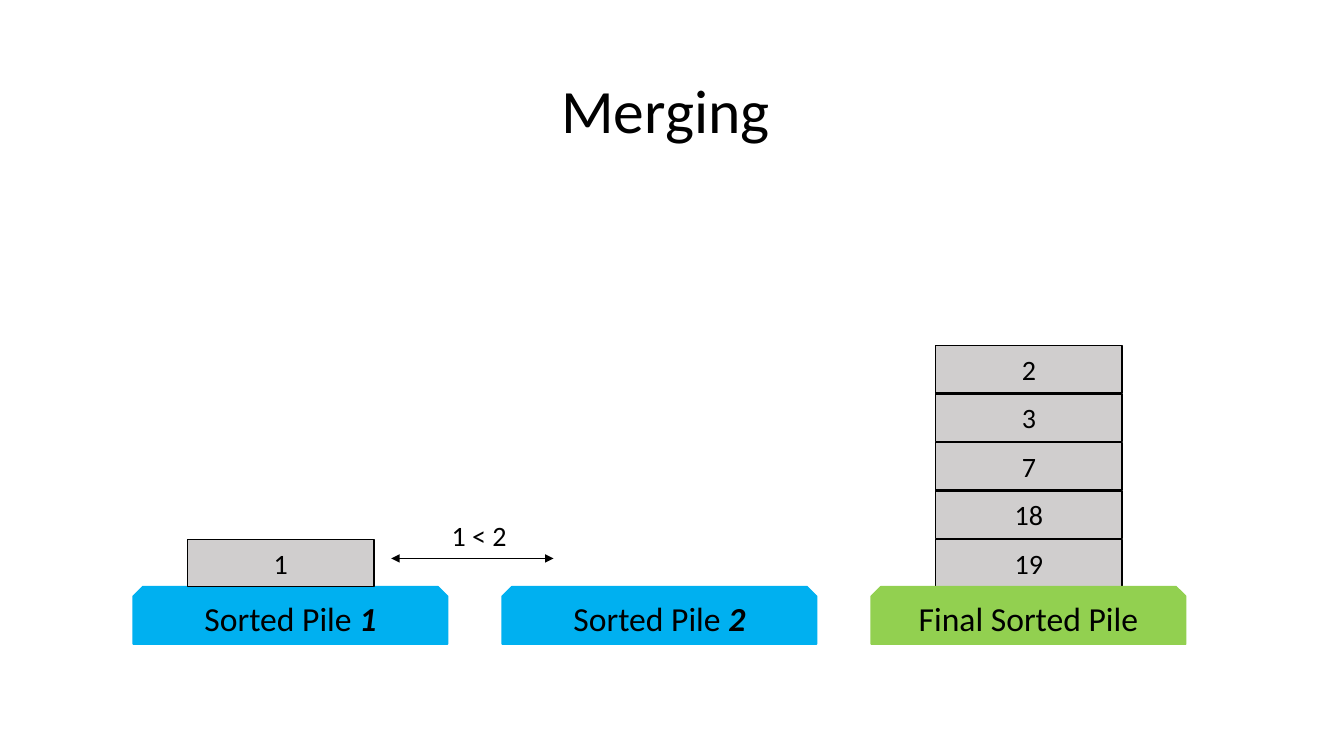
import pptx
import pptx.util
import pptx.dml.color
import pptx.enum.shapes
import pptx.enum.text
import pptx.oxml
import pptx.oxml.ns

Inches = pptx.util.Inches
SHAPES = pptx.enum.shapes.MSO_SHAPE
ALIGN = pptx.enum.text.PP_ALIGN
ANCHOR = pptx.enum.text.MSO_ANCHOR

COLORS = {"ink": "000000", "card": "D0CECE", "source": "00B0F0", "final": "92D050"}
FONT = "Calibri"
BASE_W, BASE_H = 3.12, 0.57
CARD_W, CARD_H, CARD_STEP = 1.85, 0.47, 0.48


def rgb(name):
    return pptx.dml.color.RGBColor.from_string(COLORS[name])


def write(shape, runs, size, align=ALIGN.CENTER, wrap=True):
    """Fill one paragraph; each run is (text, emphasised)."""
    frame = shape.text_frame
    frame.word_wrap = wrap
    frame.vertical_anchor = ANCHOR.MIDDLE
    paragraph = frame.paragraphs[0]
    paragraph.alignment = align
    for text, emphasised in runs:
        run = paragraph.add_run()
        run.text = text
        run.font.name = FONT
        run.font.size = pptx.util.Pt(size)
        run.font.color.rgb = rgb("ink")
        if emphasised:
            run.font.bold = run.font.italic = True
    return paragraph


def add_block(slide, preset, box, fill, line, runs, size):
    block = slide.shapes.add_shape(preset, *map(Inches, box))
    block.shadow.inherit = False
    block.fill.solid()
    block.fill.fore_color.rgb = rgb(fill)
    block.line.color.rgb = rgb(line)
    block.line.width = pptx.util.Pt(1)
    write(block, runs, size)


def add_title(slide, box, text):
    title = slide.shapes.add_textbox(*map(Inches, box))
    write(title, [(text, False)], 44).line_spacing = 0.9


def add_base(slide, left, top, label, color):
    add_block(slide, SHAPES.SNIP_2_SAME_RECTANGLE, (left, top, BASE_W, BASE_H),
              color, color, label, 24)


def add_cards(slide, left, base_top, values):
    """Stack cards upwards from the base, first value at the bottom."""
    for level, value in enumerate(values):
        top = base_top - CARD_H - level * CARD_STEP
        add_block(slide, SHAPES.RECTANGLE, (left, top, CARD_W, CARD_H),
                  "card", "ink", [(str(value), False)], 20)


def add_comparison(slide, left, top, width, text):
    # Double-headed arrow
    arrow = slide.shapes.add_connector(
        pptx.enum.shapes.MSO_CONNECTOR.STRAIGHT,
        Inches(left), Inches(top), Inches(left + width), Inches(top))
    arrow.line.color.rgb = rgb("ink")
    arrow.line.width = pptx.util.Pt(1.25)
    outline = arrow.line._get_or_add_ln()
    for end in ("a:headEnd", "a:tailEnd"):
        tip = pptx.oxml.ns.qn(end)
        outline.append(outline.makeelement(tip, {"type": "triangle"}))
    properties = outline.getparent()
    properties.append(properties.makeelement(pptx.oxml.ns.qn("a:effectLst"), {}))

    # Comparison above the arrow
    label = slide.shapes.add_textbox(
        Inches(left + 0.5), Inches(top - 0.45), Inches(0.75), Inches(0.44))
    write(label, [(text, False)], 20, ALIGN.LEFT, wrap=False)
    label.text_frame.auto_size = pptx.enum.text.MSO_AUTO_SIZE.SHAPE_TO_FIT_TEXT


def build_merging_slide(deck):
    slide = deck.slides.add_slide(deck.slide_layouts[6])
    base_top, first_left, pile_step = 5.82, 1.32, 3.66
    add_title(slide, (0.92, 0.4, 11.5, 1.45), "Merging ")

    # Sorted source piles
    for number in (1, 2):
        add_base(slide, first_left + (number - 1) * pile_step, base_top,
                 [("Sorted Pile ", False), (str(number), True)], "source")
    add_cards(slide, first_left + 0.54, base_top, [1])

    # Final pile, its base in front of the cards
    final_left = first_left + 2 * pile_step
    add_cards(slide, final_left + 0.64, base_top, [19, 18, 7, 3, 2])
    add_base(slide, final_left, base_top, [("Final Sorted Pile", False)], "final")

    add_comparison(slide, 3.88, 5.54, 1.61, "1 < 2")


def main():
    deck = pptx.Presentation()
    deck.slide_width, deck.slide_height = Inches(13.33), Inches(7.5)
    build_merging_slide(deck)
    deck.save("out.pptx")


if __name__ == "__main__":
    main()
